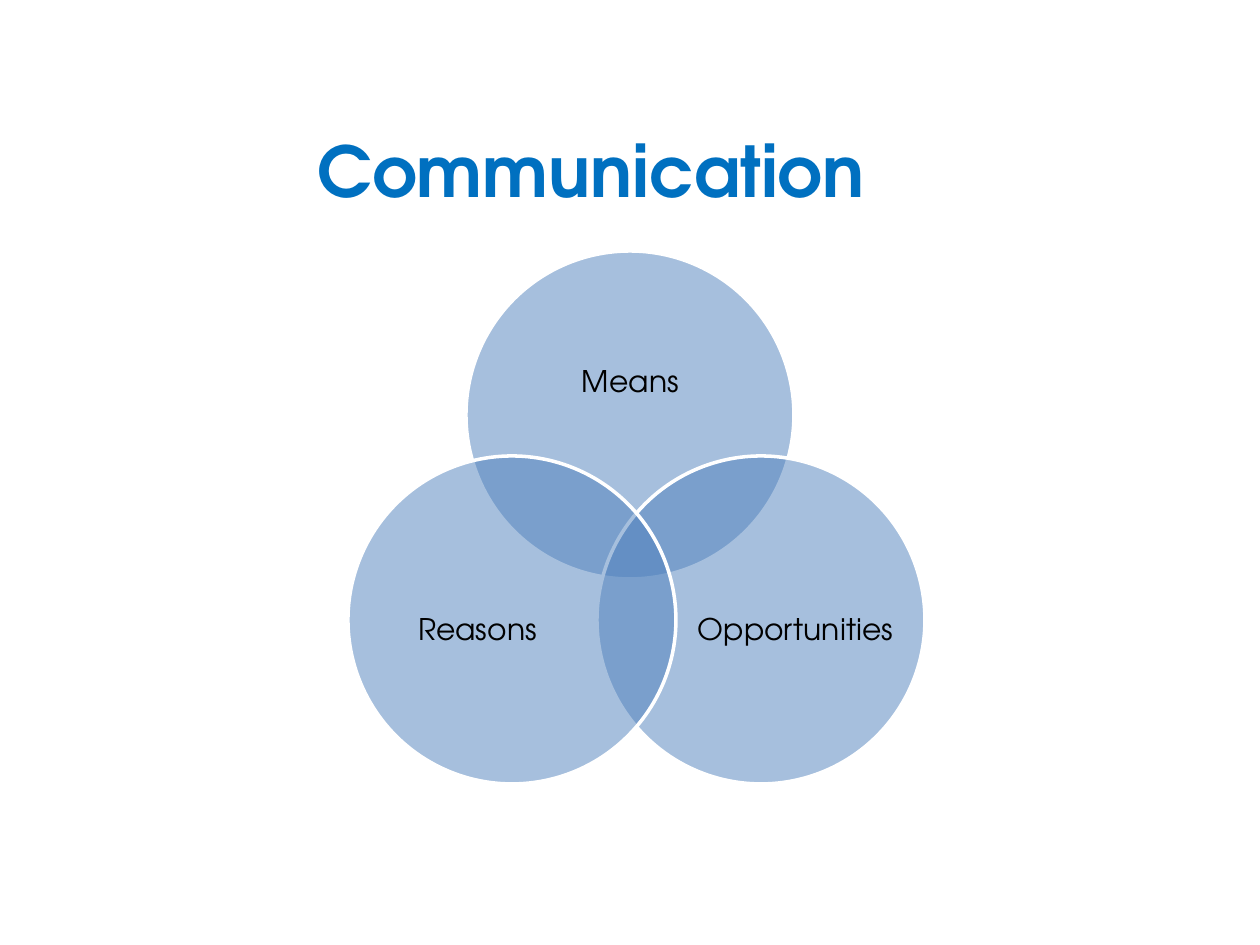
from lxml.etree import SubElement
from pptx import Presentation
from pptx.dml.color import RGBColor
from pptx.enum.shapes import MSO_SHAPE
from pptx.enum.text import MSO_ANCHOR, PP_ALIGN
from pptx.oxml.ns import qn
from pptx.util import Emu, Pt

# Content: label, circle left and top, label box (px)
TITLE = "Communication "
TITLE_BOX = (34, 115, 1134, 110)
DIAMETER = 328
CIRCLES = [
    ("Means", (466, 251), (510, 309, 241, 147)),
    ("Opportunities ", (597, 456), (697, 541, 197, 180)),
    ("Reasons", (348, 456), (379, 541, 197, 180)),
]

FONT = "TeX Gyre Adventor"
TITLE_BLUE = RGBColor(0x00, 0x70, 0xC0)
CIRCLE_BLUE = RGBColor(0x4F, 0x81, 0xBD)
WHITE = RGBColor(0xFF, 0xFF, 0xFF)
BLACK = RGBColor(0x00, 0x00, 0x00)


def px(n):
    return Emu(round(n * 914400 / 126))


def add_text(shapes, box, text, size, color, bold=False):
    tf = shapes.add_textbox(*map(px, box)).text_frame
    tf.word_wrap = True
    tf.vertical_anchor = MSO_ANCHOR.MIDDLE
    p = tf.paragraphs[0]
    p.alignment = PP_ALIGN.CENTER
    r = p.add_run()
    r.text = text
    r.font.name, r.font.size, r.font.bold = FONT, Pt(size), bold
    r.font.color.rgb = color
    return tf


def add_circle(shapes, left, top):
    sp = shapes.add_shape(MSO_SHAPE.OVAL, *map(px, (left, top, DIAMETER, DIAMETER)))
    sp.shadow.inherit = False
    sp.fill.solid()
    sp.fill.fore_color.rgb = CIRCLE_BLUE
    # Half-transparent fill, so overlaps darken
    color = sp.fill._xPr.find(qn("a:solidFill"))[0]
    SubElement(color, qn("a:alpha"), val="50000")
    sp.line.color.rgb = WHITE
    sp.line.width = Pt(2)


prs = Presentation()
prs.slide_width, prs.slide_height = px(1260), px(945)
s = prs.slides.add_slide(prs.slide_layouts[6])

# Title
add_text(s.shapes, TITLE_BOX, TITLE, 40, TITLE_BLUE, bold=True)

# Venn diagram
venn = s.shapes.add_group_shape().shapes
for label, corner, box in CIRCLES:
    add_circle(venn, *corner)
    tf = add_text(venn, box, label, 17, BLACK)
    tf.margin_left = tf.margin_top = tf.margin_right = tf.margin_bottom = 0
    p = tf.paragraphs[0]
    p.line_spacing = 0.9
    p.space_after = Pt(6)

prs.save("out.pptx")
